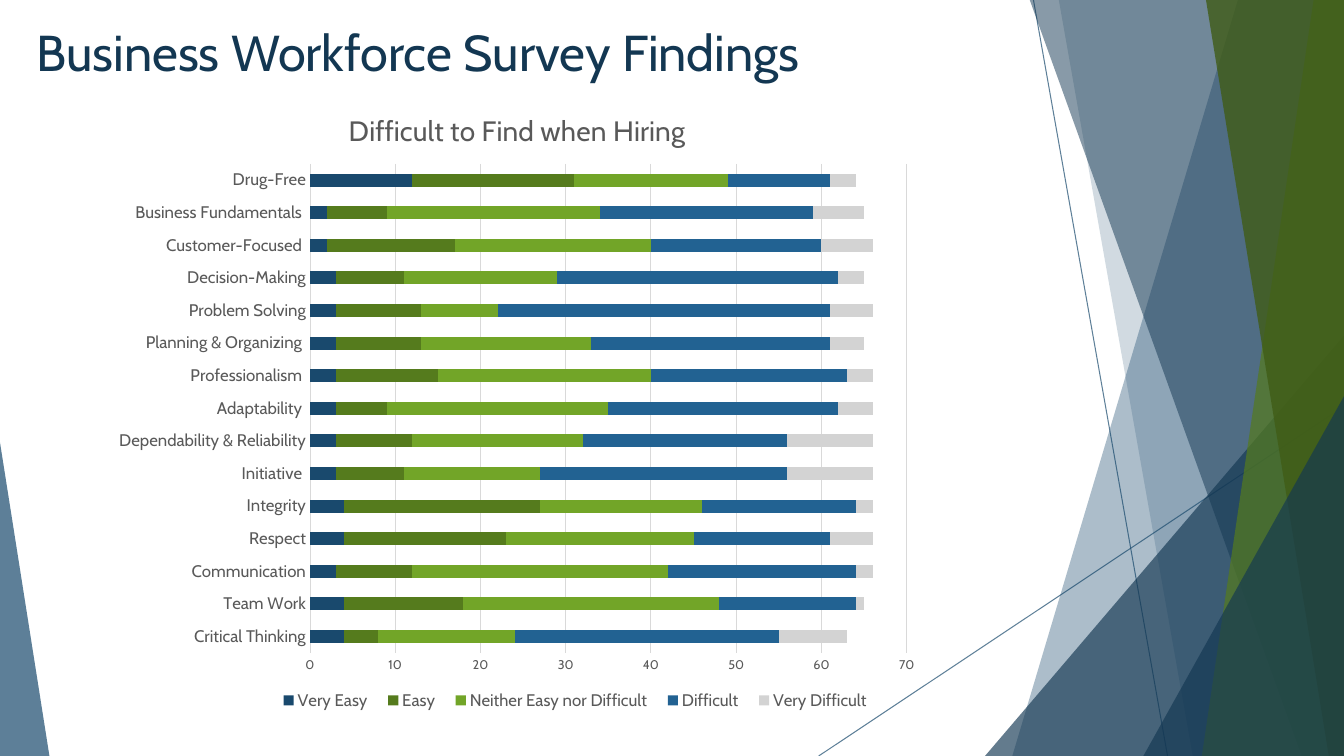
from lxml import etree
from pptx import Presentation
from pptx.chart.data import CategoryChartData
from pptx.dml.color import RGBColor
from pptx.enum.chart import XL_CHART_TYPE, XL_LEGEND_POSITION, XL_TICK_MARK
from pptx.enum.shapes import MSO_CONNECTOR, MSO_SHAPE
from pptx.enum.text import MSO_ANCHOR, PP_ALIGN
from pptx.oxml import parse_xml
from pptx.oxml.ns import nsdecls, qn
from pptx.util import Inches, Pt

FONT = "Cabin"
NAVY, DARK_NAVY, GREY, GRID = "19496D", "133752", "595959", "D9D9D9"


def paint(fill, color, alpha=100):
    """Fill solidly with a hex colour, at alpha percent opacity."""
    fill.solid()
    fill.fore_color.rgb = RGBColor.from_string(color)
    if alpha < 100:
        # The colour element is the last srgbClr added below the fill's parent
        clr = fill._xPr.find(".//" + qn("a:srgbClr"))
        etree.SubElement(clr, qn("a:alpha"), val=str(alpha * 1000))


def style_font(font, size, color):
    font.name, font.size, font.bold = FONT, Pt(size), False
    font.color.rgb = RGBColor.from_string(color)


prs = Presentation()
prs.slide_width, prs.slide_height = Inches(13.33), Inches(7.5)
s = prs.slides.add_slide(prs.slide_layouts[5])

# Thin crossing lines
for x1, y1, x2, y2 in [(10.25, 0, 11.58, 7.5), (13.33, 4.03, 8.12, 7.5)]:
    line = s.shapes.add_connector(
        MSO_CONNECTOR.STRAIGHT, Inches(x1), Inches(y1), Inches(x2), Inches(y2))
    line.line.width = Pt(0.75)
    paint(line.line.fill, NAVY, 70)
    etree.SubElement(line._element.spPr, qn("a:effectLst"))

# Facets, back to front. A band runs from its top left and bottom left corners
# to the right edge; a triangle has left, top, width, height and apex.
facets = [
    ("band", (12.28, 10.04), NAVY, 36),
    ("band", (10.5, 11.83), NAVY, 20),
    ("triangle", (9.77, 3.33, 3.56, 4.17, 1), DARK_NAVY, 66),
    ("band", (10.21, 12.91), DARK_NAVY, 50),
    ("band", (13.03, 11.92), "557B1D", 70),
    ("band", (11.96, 13.18), "405C16", 80),
    ("triangle", (11.34, 3.93, 1.99, 3.57, 1), DARK_NAVY, 66),
    ("triangle", (0, 4.39, 0.49, 3.11, 0), NAVY, 70),
]
for kind, geometry, color, alpha in facets:
    if kind == "band":
        top_x, bottom_x = geometry
        outline = s.shapes.build_freeform(Inches(top_x), Inches(-0.01))
        outline.add_line_segments([
            (Inches(x), Inches(y))
            for x, y in [(13.33, -0.01), (13.33, 7.5), (bottom_x, 7.5)]])
        sp = outline.convert_to_shape()
    else:
        *box, apex = geometry
        sp = s.shapes.add_shape(
            MSO_SHAPE.ISOSCELES_TRIANGLE, *[Inches(v) for v in box])
        sp.adjustments[0] = apex
    paint(sp.fill, color, alpha)
    sp.line.fill.background()
    sp.shadow.inherit = False

# Title
title = s.shapes.title
title.left, title.top = Inches(0.26), Inches(0.16)
title.width, title.height = Inches(8.3), Inches(0.71)
tf = title.text_frame
tf.text = "Business Workforce Survey Findings"
tf.vertical_anchor = MSO_ANCHOR.TOP
tf.paragraphs[0].alignment = PP_ALIGN.LEFT
style_font(tf.paragraphs[0].font, 36, DARK_NAVY)

# Survey chart
data = CategoryChartData()
data.categories = [
    "Critical Thinking", "Team Work", "Communication", "Respect", "Integrity",
    "Initiative ", "Dependability & Reliability", "Adaptability ",
    "Professionalism ", "Planning & Organizing ", "Problem Solving",
    "Decision-Making", "Customer-Focused ", "Business Fundamentals ",
    "Drug-Free"]
answers = [
    ("Very Easy", NAVY, [4, 4, 3, 4, 4, 3, 3, 3, 3, 3, 3, 3, 2, 2, 12]),
    ("Easy", "557B1D", [4, 14, 9, 19, 23, 8, 9, 6, 12, 10, 10, 8, 15, 7, 19]),
    ("Neither Easy nor Difficult", "72A528",
     [16, 30, 30, 22, 19, 16, 20, 26, 25, 20, 9, 18, 23, 25, 18]),
    ("Difficult", "226292",
     [31, 16, 22, 16, 18, 29, 24, 27, 23, 28, 39, 33, 20, 25, 12]),
    ("Very Difficult", "D3D3D3",
     [8, 1, 2, 5, 2, 10, 10, 4, 3, 4, 5, 3, 6, 6, 3]),
]
for name, color, values in answers:
    data.add_series(name, values)
chart = s.shapes.add_chart(
    XL_CHART_TYPE.BAR_STACKED, Inches(1.02), Inches(0.87), Inches(8.22),
    Inches(6.3), data).chart
style_font(chart.font, 10, "000000")

chart.has_title = True
chart.chart_title.include_in_layout = False
p = chart.chart_title.text_frame.paragraphs[0]
p.text = "Difficult to Find when Hiring"
style_font(p.font, 20, GREY)

plot = chart.plots[0]
plot.gap_width, plot.overlap, plot.vary_by_categories = 150, 100, False
for series, (name, color, values) in zip(plot.series, answers):
    paint(series.format.fill, color)

for axis, size in [(chart.category_axis, 12), (chart.value_axis, 9)]:
    axis.major_tick_mark = axis.minor_tick_mark = XL_TICK_MARK.NONE
    style_font(axis.tick_labels.font, size, GREY)
value_axis = chart.value_axis
value_axis.minimum_scale, value_axis.maximum_scale = 0, 70
value_axis.major_unit = 10
value_axis.format.line.fill.background()
for rule in (chart.category_axis.format.line,
             value_axis.major_gridlines.format.line):
    rule.width = Pt(0.75)
    paint(rule.fill, GRID)

chart.has_legend = True
legend = chart.legend
legend.position = XL_LEGEND_POSITION.BOTTOM
legend.include_in_layout = False
style_font(legend.font, 12, GREY)

# Fixed places of plot area and legend, as fractions of the chart
plot_area = chart._chartSpace.chart.plotArea
for old in plot_area.findall(qn("c:layout")):
    plot_area.remove(old)
for parent, index, target, box in [
        (plot_area, 0, '<c:layoutTarget val="inner"/>', (0.25, 0.12, 0.72, 0.77)),
        (legend._element, 1, "", (0.2, 0.94, 0.74, 0.05))]:
    for old in parent.findall(qn("c:layout")):
        parent.remove(old)
    places = "".join(f'<c:{k} val="{v}"/>' for k, v in zip("xywh", box))
    modes = '<c:xMode val="edge"/><c:yMode val="edge"/>'
    parent.insert(index, parse_xml(
        f'<c:layout {nsdecls("c")}><c:manualLayout>{target}{modes}{places}'
        '</c:manualLayout></c:layout>'))

prs.save("out.pptx")
